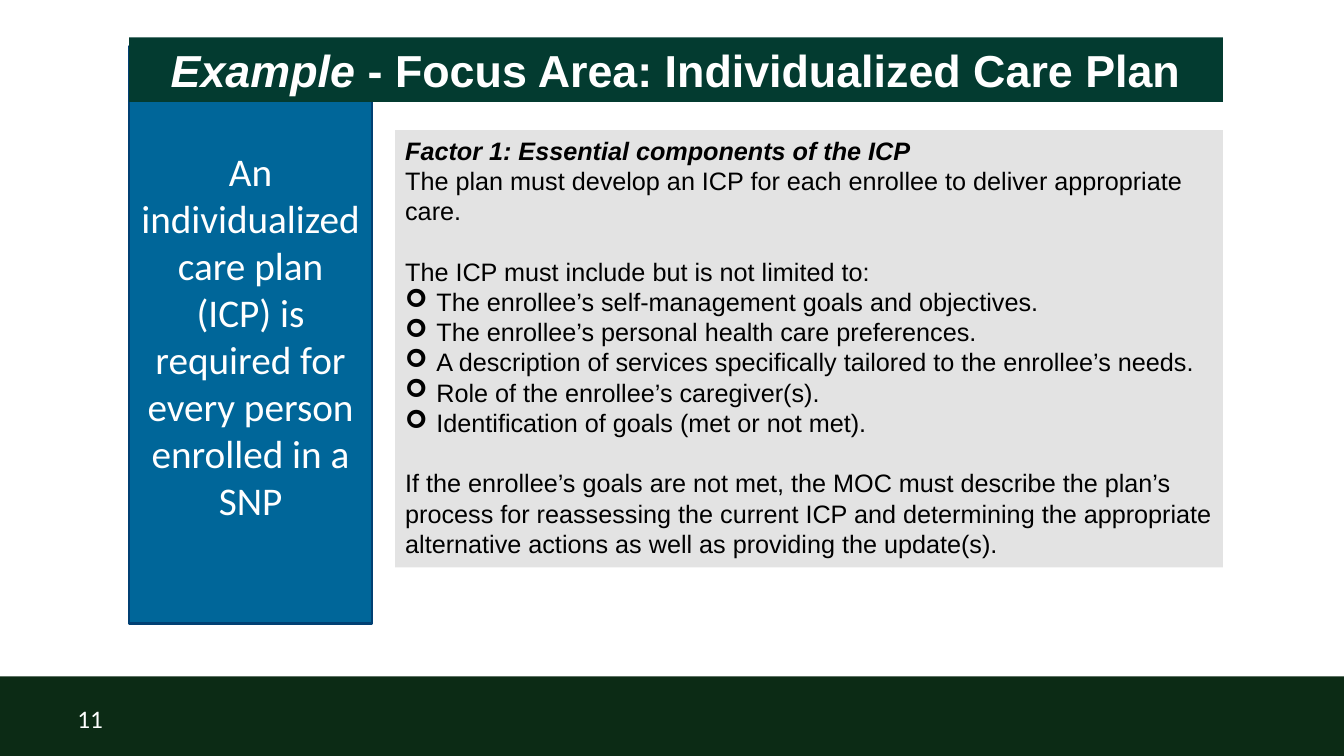
from lxml.etree import SubElement
from pptx import Presentation
from pptx.dml.color import RGBColor as Rgb
from pptx.enum.shapes import MSO_SHAPE as Shape
from pptx.enum.text import MSO_ANCHOR as Anchor, PP_ALIGN as Align
from pptx.oxml.ns import qn
from pptx.util import Inches, Pt

WIDTH, HEIGHT = 13.33, 7.5
LEFT, RIGHT = 1.28, 12.13
BODY_LEFT = 3.92
FOOTER_TOP = 6.71
BODY_SIZE = 18
LINE_GAP = 21.6
COLORS = {
    "footer": "0C2B15",
    "title": "033B30",
    "panel": "006699",
    "panel_line": "014073",
    "body": "E3E3E3",
    "white": "FFFFFF",
    "black": "000000",
}
INTRO = "The plan must develop an ICP for each enrollee to deliver appropriate care."
COMPONENTS = [
    "The enrollee’s self-management goals and objectives.",
    "The enrollee’s personal health care preferences.",
    "A description of services specifically tailored to the enrollee’s needs.",
    "Role of the enrollee’s caregiver(s).",
    "Identification of goals (met or not met).",
]
CLOSING = (
    "If the enrollee’s goals are not met, the MOC must describe the plan’s "
    "process for reassessing the current ICP and determining the appropriate "
    "alternative actions as well as providing the update(s)."
)


def color(name):
    """Return the named slide colour."""
    return Rgb.from_string(COLORS[name])


def add_block(page, left, top, right, bottom, fill, line=None, anchor=Anchor.TOP):
    """Add a filled rectangle given by its edges in inches."""
    block = page.shapes.add_shape(
        Shape.RECTANGLE, Inches(left), Inches(top),
        Inches(right - left), Inches(bottom - top),
    )
    block.shadow.inherit = False
    block.fill.solid()
    block.fill.fore_color.rgb = color(fill)
    if line:
        block.line.color.rgb = color(line)
        block.line.width = Pt(2)
    else:
        block.line.fill.background()
    block.text_frame.word_wrap = True
    block.text_frame.vertical_anchor = anchor
    return block


def style(para, size, ink, face="Arial", align=Align.LEFT, bold=False):
    """Set the alignment and font of a paragraph."""
    para.alignment = align
    para.font.size = Pt(size)
    para.font.name = face
    para.font.bold = bold
    para.font.color.rgb = color(ink)


def add_bullet(para):
    """Give a paragraph a hanging arrow bullet."""
    props = para._p.get_or_add_pPr()
    props.set("marL", str(Inches(0.31)))
    props.set("indent", str(-Inches(0.31)))
    SubElement(props, qn("a:buFont")).set("typeface", "Wingdings")
    SubElement(props, qn("a:buChar")).set("char", "➢")


def add_title(page):
    """Add the title bar with its italic lead word."""
    bar = add_block(page, LEFT, 0.37, RIGHT, 1.01, "title")
    para = bar.text_frame.paragraphs[0]
    style(para, 32, "white", align=Align.CENTER, bold=True)
    for text, italic in (
        ("Example", True),
        (" - Focus Area: Individualized Care Plan", False),
    ):
        span = para.add_run()
        span.text = text
        span.font.italic = italic


def add_panel(page):
    """Add the side panel that states the requirement."""
    panel = add_block(page, LEFT, 0.46, 3.69, 6.19, "panel", "panel_line", Anchor.MIDDLE)
    para = panel.text_frame.paragraphs[0]
    para.text = "An individualized care plan (ICP) is required for every person enrolled in a SNP"
    style(para, 28, "white", "Calibri", Align.CENTER)


def add_body(page):
    """Add the factor text with its list of components."""
    frame = add_block(page, BODY_LEFT, 1.29, RIGHT, 5.63, "body").text_frame
    heading = frame.paragraphs[0]
    heading.text = "Factor 1: Essential components of the ICP"
    style(heading, BODY_SIZE, "black", bold=True)
    heading.font.italic = True
    rows = [(INTRO, 0, False), ("The ICP must include but is not limited to:", LINE_GAP, False)]
    rows += [(component, 0, True) for component in COMPONENTS]
    rows.append((CLOSING, LINE_GAP, False))
    for text, gap, bulleted in rows:
        para = frame.add_paragraph()
        para.text = text
        para.space_before = Pt(gap)
        if bulleted:
            add_bullet(para)
        style(para, BODY_SIZE, "black")


def add_footer(page):
    """Add the footer band."""
    add_block(page, 0, FOOTER_TOP, WIDTH, HEIGHT, "footer")


def add_page_number(page):
    """Add the page number over the footer band."""
    box = page.shapes.add_textbox(Inches(0.67), Inches(6.93), Inches(0.8), Inches(0.57))
    box.text_frame.word_wrap = True
    para = box.text_frame.paragraphs[0]
    para.text = "11"
    style(para, BODY_SIZE, "white", "Calibri")


def main():
    """Build the slide and save it."""
    deck = Presentation()
    deck.slide_width, deck.slide_height = Inches(WIDTH), Inches(HEIGHT)
    page = deck.slides.add_slide(deck.slide_layouts[6])
    add_footer(page)
    add_body(page)
    add_panel(page)
    add_title(page)
    add_page_number(page)
    deck.save("out.pptx")


if __name__ == "__main__":
    main()
